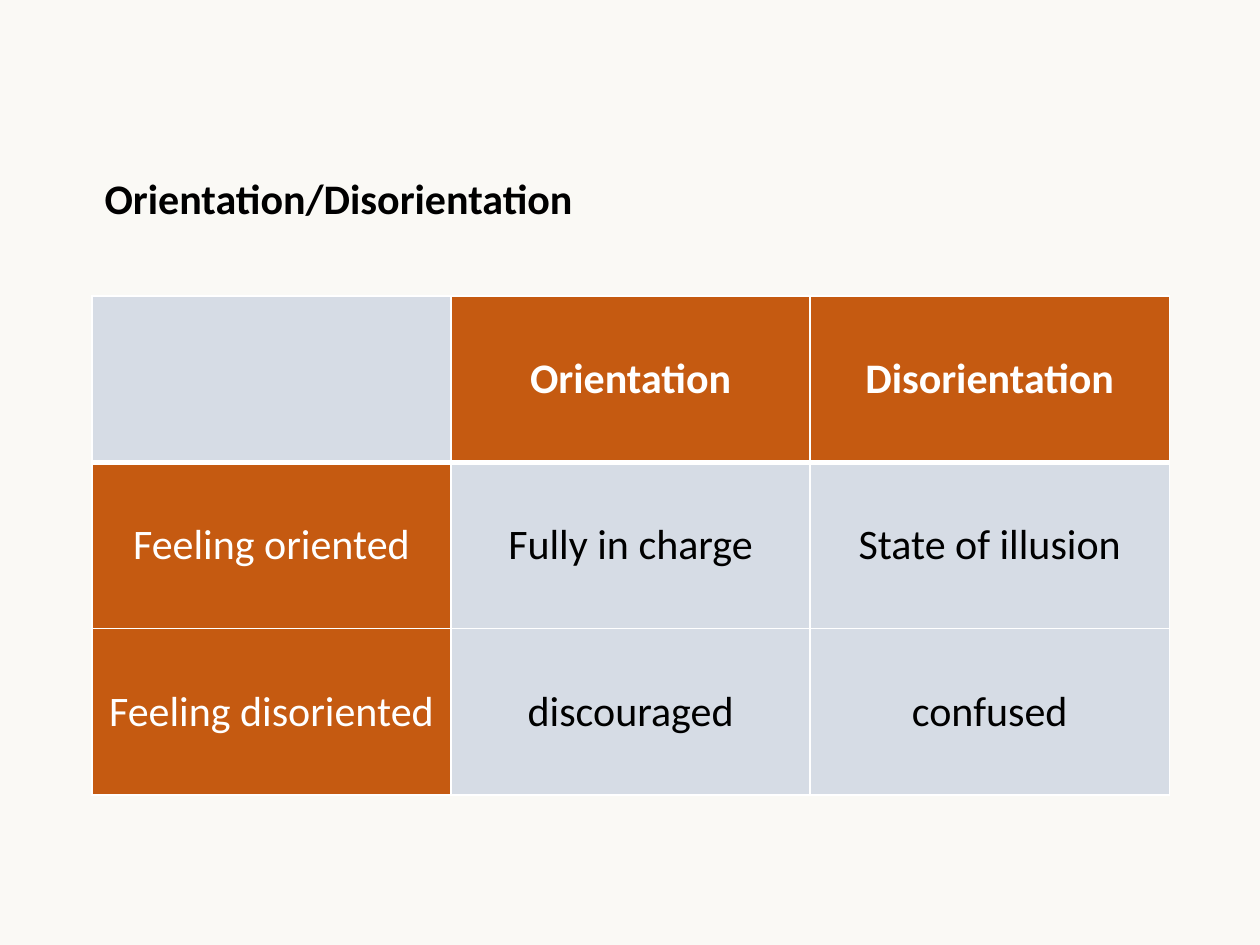
from dataclasses import dataclass

from lxml import etree
from pptx import Presentation
from pptx.dml.color import RGBColor
from pptx.enum.text import MSO_ANCHOR, PP_ALIGN
from pptx.oxml.ns import qn
from pptx.util import Inches, Pt

MIDDLE = MSO_ANCHOR.MIDDLE
LEFT, CENTER = PP_ALIGN.LEFT, PP_ALIGN.CENTER
TITLE_ONLY = 5
FONT = "Calibri"
TEXT_SIZE = 24
COLORS = {
    "page": "FAF9F5",
    "heading": "C55A11",
    "body": "D6DCE5",
    "border": "FFFFFF",
    "light": "FFFFFF",
    "dark": "000000",
}


@dataclass
class CellStyle:
    fill: str
    text: str
    bold: bool = False


COLUMN_HEADING = CellStyle("heading", "light", True)
ROW_HEADING = CellStyle("heading", "light")
BODY = CellStyle("body", "dark")

ROWS = [
    ["", "Orientation", "Disorientation"],
    ["Feeling oriented", "Fully in charge", "State of illusion"],
    ["Feeling disoriented", "discouraged", "confused"],
]
COLUMN_WIDTH = 2.85
ROW_HEIGHT = 1.32


def color(name: str) -> RGBColor:
    return RGBColor.from_string(COLORS[name])


def add_span(para, text: str, text_color: str, bold: bool) -> None:
    span = para.add_run()
    span.text = text
    span.font.name = FONT
    span.font.size = Pt(TEXT_SIZE)
    span.font.bold = bold
    span.font.color.rgb = color(text_color)


def cell_style(row: int, column: int) -> CellStyle:
    if row == 0 and column > 0:
        return COLUMN_HEADING
    if row > 0 and column == 0:
        return ROW_HEADING
    return BODY


def set_borders(cell, top: int, bottom: int) -> None:
    properties = cell._tc.get_or_add_tcPr()
    widths = {"lnL": 1, "lnR": 1, "lnT": top, "lnB": bottom}
    for index, (side, width) in enumerate(widths.items()):
        line = etree.Element(qn(f"a:{side}"), w=str(Pt(width)))
        fill = etree.SubElement(line, qn("a:solidFill"))
        etree.SubElement(fill, qn("a:srgbClr"), val=COLORS["border"])
        properties.insert(index, line)


def fill_cell(cell, text: str, style: CellStyle) -> None:
    cell.fill.solid()
    cell.fill.fore_color.rgb = color(style.fill)
    cell.vertical_anchor = MIDDLE
    para = cell.text_frame.paragraphs[0]
    para.alignment = CENTER
    if text:
        add_span(para, text, style.text, style.bold)


def add_title(page, text: str) -> None:
    box = page.shapes.title
    box.left, box.top = Inches(0.73), Inches(1.32)
    box.width, box.height = Inches(3.96), Inches(0.5)
    frame = box.text_frame
    frame.word_wrap = False
    frame.vertical_anchor = MIDDLE
    para = frame.paragraphs[0]
    para.alignment = LEFT
    add_span(para, text, "dark", True)


def add_matrix(page) -> None:
    row_count, column_count = len(ROWS), len(ROWS[0])
    table = page.shapes.add_table(
        row_count, column_count, Inches(0.73), Inches(2.35),
        Inches(COLUMN_WIDTH * column_count), Inches(ROW_HEIGHT * row_count),
    ).table
    for row, texts in enumerate(ROWS):
        for column, text in enumerate(texts):
            cell = table.cell(row, column)
            fill_cell(cell, text, cell_style(row, column))
            set_borders(cell, 3 if row == 1 else 1, 3 if row == 0 else 1)


def main() -> None:
    deck = Presentation()
    deck.slide_width, deck.slide_height = Inches(10), Inches(7.5)
    page = deck.slides.add_slide(deck.slide_layouts[TITLE_ONLY])
    page.background.fill.solid()
    page.background.fill.fore_color.rgb = color("page")
    add_matrix(page)
    add_title(page, "Orientation/Disorientation")
    deck.save("out.pptx")


if __name__ == "__main__":
    main()
